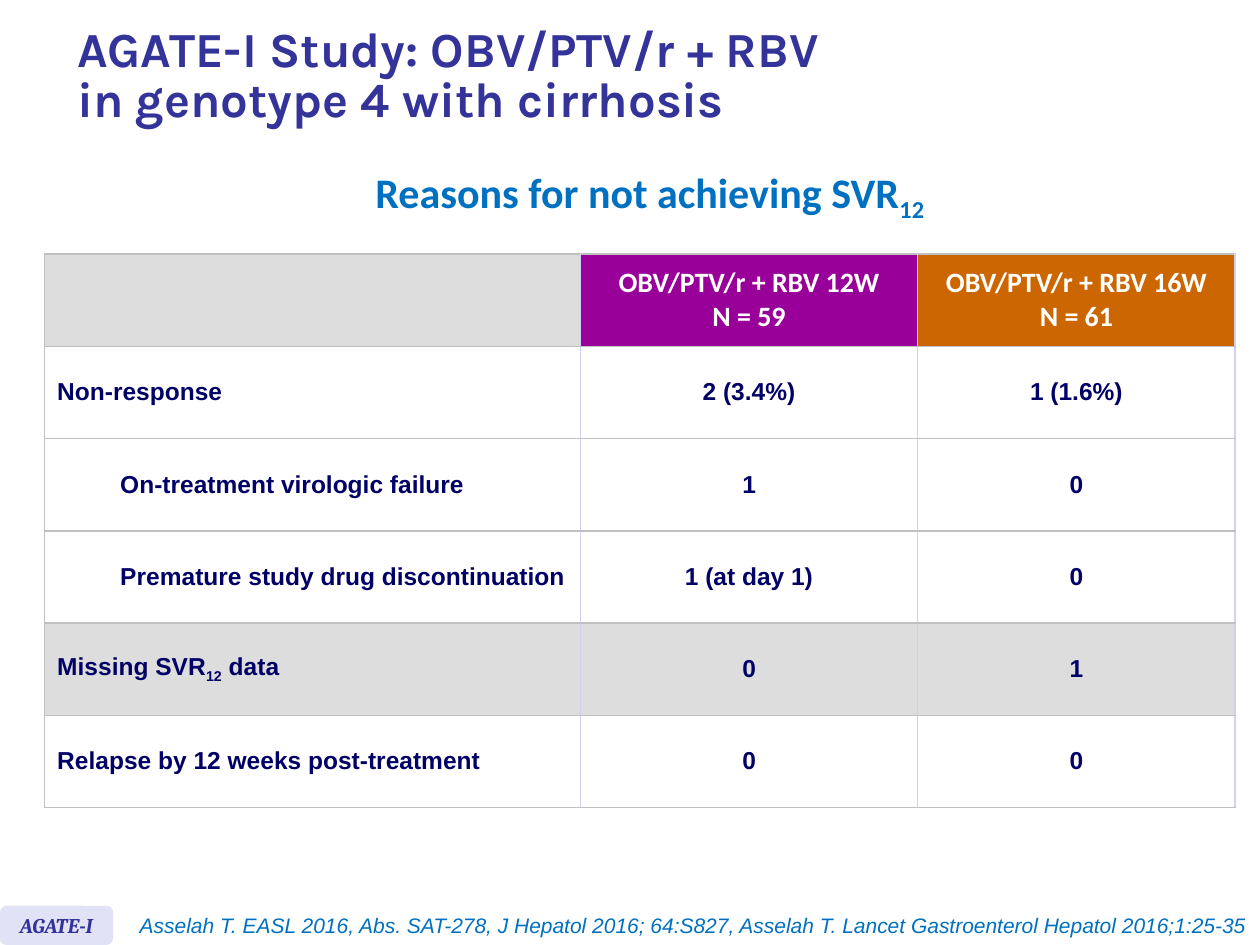
from copy import deepcopy
from dataclasses import dataclass
from typing import Optional

from lxml.etree import SubElement
from pptx import Presentation
from pptx.dml.color import RGBColor
from pptx.enum.shapes import MSO_SHAPE as Shape
from pptx.enum.text import MSO_ANCHOR as Anchor, PP_ALIGN as Align
from pptx.oxml.ns import qn
from pptx.util import Cm, Pt


@dataclass(frozen=True)
class Style:
    font: str
    size: int
    color: str
    bold: bool = False
    italic: bool = False


@dataclass(frozen=True)
class Theme:
    title: Style = Style("Karla", 28, "333399", bold=True)
    subtitle: Style = Style("Calibri", 24, "0070C0", bold=True)
    header: Style = Style("Calibri", 16, "FFFFFF", bold=True)
    body: Style = Style("Arial", 14, "000066", bold=True)
    badge: Style = Style("Cambria", 12, "333399", bold=True, italic=True)
    reference: Style = Style("Arial", 12, "0070C0", italic=True)
    white: str = "FFFFFF"
    gray: str = "DDDDDD"
    purple: str = "990099"
    orange: str = "CC6600"
    badge_fill: str = "E2E2F6"
    row_line: str = "C0C0C0"
    column_line: str = "D0D0F0"


@dataclass(frozen=True)
class Box:
    left: float
    top: float
    width: float
    height: float

    def lengths(self) -> tuple:
        return Cm(self.left), Cm(self.top), Cm(self.width), Cm(self.height)


@dataclass(frozen=True)
class Row:
    label: str
    values: tuple
    subscript: str = ""
    ending: str = ""
    indent: float = 0
    fill: str = "FFFFFF"


THEME = Theme()
COLUMN_WIDTHS = (10.8, 6.8, 6.4)
ROW_HEIGHT = 1.86
HEADERS = (
    (("OBV/PTV/r + RBV 12W", "N = 59"), THEME.purple),
    (("OBV/PTV/r + RBV 16W", "N = 61"), THEME.orange),
)
ROWS = (
    Row("Non-response", ("2 (3.4%)", "1 (1.6%)")),
    Row("On-treatment virologic failure", ("1", "0"), indent=1.27),
    Row("Premature study drug discontinuation", ("1 (at day 1)", "0"), indent=1.27),
    Row("Missing SVR", ("0", "1"), "12", " data", fill=THEME.gray),
    Row("Relapse by 12 weeks post-treatment", ("0", "0")),
)


def add_run(paragraph, text: str, style: Style, baseline: Optional[int] = None):
    run = paragraph.add_run()
    run.text = text
    font = run.font
    font.name, font.size = style.font, Pt(style.size)
    font.bold, font.italic = style.bold, style.italic
    font.color.rgb = RGBColor.from_string(style.color)
    if baseline is not None:
        run._r.get_or_add_rPr().set("baseline", str(baseline * 1000))
    return run


def add_lines(paragraph, lines: tuple, style: Style) -> None:
    """Put lines in one paragraph, with breaks sized like the text."""
    run = add_run(paragraph, lines[0], style)
    for line in lines[1:]:
        paragraph.add_line_break()
        paragraph._p.findall(qn("a:br"))[-1].append(deepcopy(run._r.rPr))
        add_run(paragraph, line, style)


def add_label(paragraph, text: str, subscript: str, ending: str, style: Style) -> None:
    add_run(paragraph, text, style)
    if subscript:
        add_run(paragraph, subscript, style, baseline=-25)
    if ending:
        add_run(paragraph, ending, style)


def add_text_box(slide, box: Box, alignment: Align):
    """Return the paragraph of a new wrapping text box."""
    frame = slide.shapes.add_textbox(*box.lengths()).text_frame
    frame.word_wrap = True
    paragraph = frame.paragraphs[0]
    paragraph.alignment = alignment
    return paragraph


def format_cell(cell, fill: str, left_line: str) -> None:
    cell.vertical_anchor = Anchor.MIDDLE
    properties = cell._tc.get_or_add_tcPr()
    borders = (
        ("a:lnL", left_line),
        ("a:lnR", THEME.column_line),
        ("a:lnT", THEME.row_line),
        ("a:lnB", THEME.row_line),
    )
    for tag, color in borders:
        line = SubElement(properties, qn(tag), w=str(Pt(1)))
        solid = SubElement(line, qn("a:solidFill"))
        SubElement(solid, qn("a:srgbClr"), val=color)
    cell.fill.solid()
    cell.fill.fore_color.rgb = RGBColor.from_string(fill)


def add_title(slide) -> None:
    title = slide.shapes.title
    title.left, title.top, title.width, title.height = Box(1.3, 0.2, 23.2, 2.72).lengths()
    frame = title.text_frame
    frame.vertical_anchor = Anchor.MIDDLE
    paragraph = frame.paragraphs[0]
    paragraph.alignment = Align.LEFT
    paragraph.line_spacing = 0.85
    lines = ("AGATE-I Study: OBV/PTV/r + RBV", "in genotype 4 with cirrhosis")
    add_lines(paragraph, lines, THEME.title)


def add_results_table(slide) -> None:
    row_count = len(ROWS) + 1
    box = Box(0.9, 5.12, sum(COLUMN_WIDTHS), ROW_HEIGHT * row_count)
    table = slide.shapes.add_table(row_count, len(COLUMN_WIDTHS), *box.lengths()).table
    table.horz_banding = False
    for column, width in zip(table.columns, COLUMN_WIDTHS):
        column.width = Cm(width)
    for table_row in table.rows:
        table_row.height = Cm(ROW_HEIGHT)

    format_cell(table.cell(0, 0), THEME.gray, THEME.row_line)
    for column, (lines, fill) in enumerate(HEADERS, start=1):
        cell = table.cell(0, column)
        format_cell(cell, fill, THEME.column_line)
        paragraph = cell.text_frame.paragraphs[0]
        paragraph.alignment = Align.CENTER
        add_lines(paragraph, lines, THEME.header)

    for index, row in enumerate(ROWS, start=1):
        cell = table.cell(index, 0)
        format_cell(cell, row.fill, THEME.row_line)
        paragraph = cell.text_frame.paragraphs[0]
        if row.indent:
            paragraph.level = 1
            paragraph._p.get_or_add_pPr().set("marL", str(Cm(row.indent)))
        add_label(paragraph, row.label, row.subscript, row.ending, THEME.body)
        for column, value in enumerate(row.values, start=1):
            cell = table.cell(index, column)
            format_cell(cell, row.fill, THEME.column_line)
            paragraph = cell.text_frame.paragraphs[0]
            paragraph.alignment = Align.CENTER
            add_run(paragraph, value, THEME.body)


def add_study_badge(slide) -> None:
    badge = slide.shapes.add_shape(Shape.ROUNDED_RECTANGLE, *Box(0, 18.26, 2.28, 0.79).lengths())
    badge.shadow.inherit = False
    badge.fill.solid()
    badge.fill.fore_color.rgb = RGBColor.from_string(THEME.badge_fill)
    badge.line.fill.background()
    frame = badge.text_frame
    frame.word_wrap = False
    frame.vertical_anchor = Anchor.MIDDLE
    paragraph = frame.paragraphs[0]
    paragraph.alignment = Align.CENTER
    add_run(paragraph, "AGATE-I", THEME.badge)


def main() -> None:
    presentation = Presentation()
    presentation.slide_width, presentation.slide_height = Cm(25.4), Cm(19.05)
    slide = presentation.slides.add_slide(presentation.slide_layouts[5])
    add_title(slide)
    subtitle = add_text_box(slide, Box(1.1, 3.23, 24, 1.27), Align.CENTER)
    add_label(subtitle, "Reasons for not achieving SVR", "12", "", THEME.subtitle)
    add_results_table(slide)
    add_study_badge(slide)
    reference = add_text_box(slide, Box(2.1, 18.28, 23.3, 0.77), Align.RIGHT)
    add_run(reference, "Asselah T. EASL 2016, Abs. SAT-278, J Hepatol 2016; 64:S827, "
            "Asselah T. Lancet Gastroenterol Hepatol 2016;1:25-35", THEME.reference)
    presentation.save("out.pptx")


if __name__ == "__main__":
    main()
